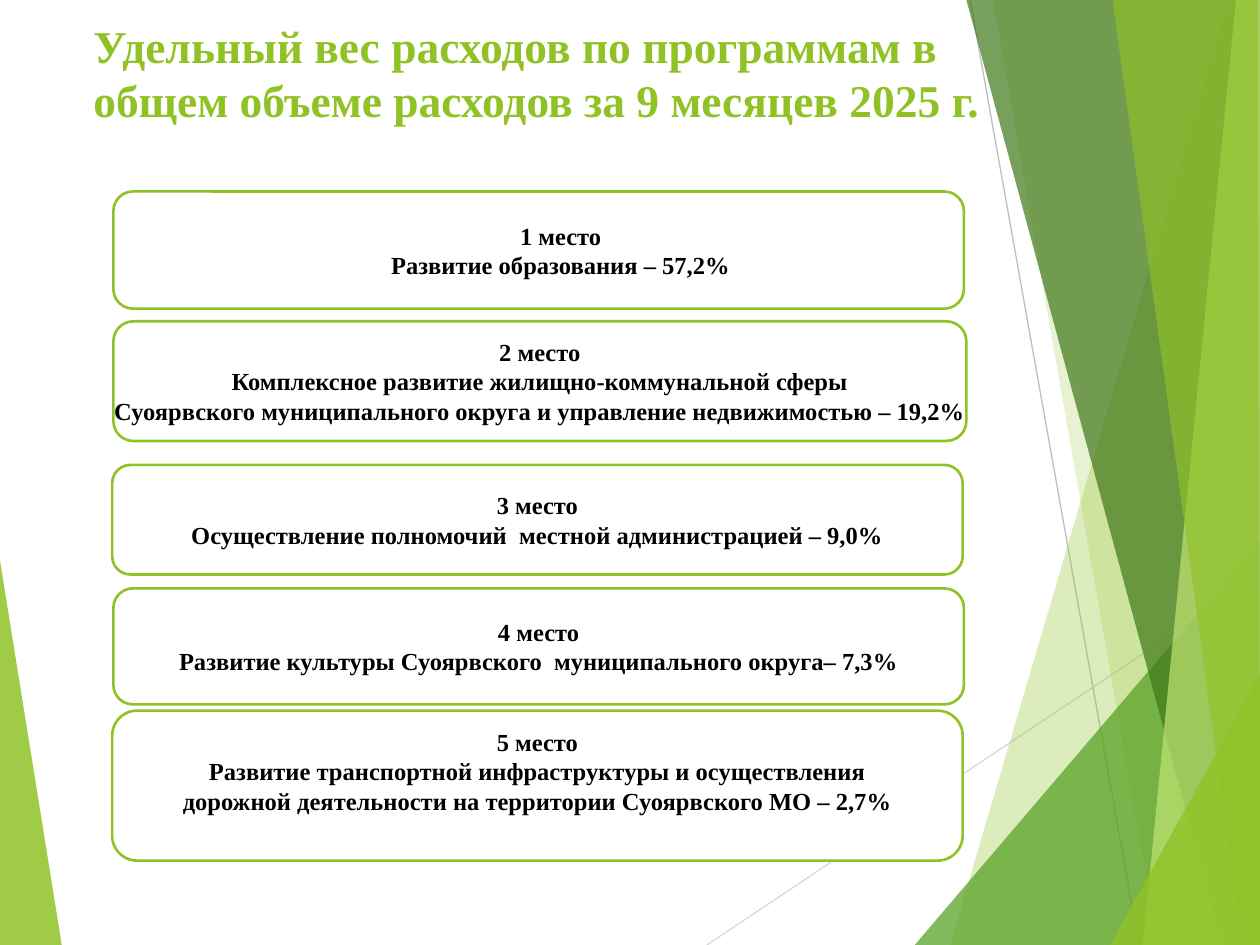
"""Build a slide ranking municipal programmes by their share of spending."""
from lxml.etree import SubElement
from pptx import Presentation
from pptx.dml.color import RGBColor
from pptx.enum.shapes import MSO_CONNECTOR as Connector, MSO_SHAPE as Shape
from pptx.enum.text import MSO_ANCHOR as Anchor, MSO_AUTO_SIZE as AutoSize, PP_ALIGN as Align
from pptx.oxml.ns import qn
from pptx.util import Pt

PX = 9144
WIDTH, HEIGHT = 1000, 750
FONT = "Times New Roman"
LIME = RGBColor(0x90, 0xC2, 0x26)
GREEN = RGBColor(0x54, 0xA0, 0x21)
DARK_GREEN = RGBColor(0x3F, 0x78, 0x19)
PALE_LIME = RGBColor(0xC0, 0xE4, 0x74)
LIGHT_GREY = RGBColor(0xD9, 0xD9, 0xD9)
GREY = RGBColor(0xBF, 0xBF, 0xBF)
WHITE = RGBColor(0xFF, 0xFF, 0xFF)
BLACK = RGBColor(0x00, 0x00, 0x00)


def format_paragraph(paragraph, size, color, alignment):
    paragraph.alignment = alignment
    paragraph.font.name = FONT
    paragraph.font.size = Pt(size)
    paragraph.font.bold = True
    paragraph.font.color.rgb = color


def add_panel(shapes, preset, box, lines):
    panel = shapes.add_shape(preset, *(value * PX for value in box))
    panel.shadow.inherit = False
    panel.fill.solid()
    panel.fill.fore_color.rgb = WHITE
    frame = panel.text_frame
    frame.vertical_anchor = Anchor.MIDDLE
    frame.word_wrap = False
    if lines:
        frame.text = "\n".join(lines)
        for paragraph in frame.paragraphs:
            format_paragraph(paragraph, 14, BLACK, Align.CENTER)
    return panel


presentation = Presentation()
presentation.slide_width = WIDTH * PX
presentation.slide_height = HEIGHT * PX
slide = presentation.slides.add_slide(presentation.slide_layouts[5])
shapes = slide.shapes

rays = [
    (LIME, 85, [(0, 445), (49, 750), (0, 750)]),
    (LIME, 30, [(975, 0), (754, 750), (1000, 750), (1000, 0)]),
    (LIME, 20, [(788, 0), (919, 750), (1000, 750), (1000, 0)]),
    (GREEN, 72, [(726, 750), (1000, 429), (1000, 750)]),
    (DARK_GREEN, 70, [(767, 0), (970, 750), (1000, 750), (1000, 0)]),
    (PALE_LIME, 70, [(981, 0), (907, 750), (1000, 750), (1000, 0)]),
    (LIME, 65, [(883, 0), (986, 750), (1000, 750), (998, 0)]),
    (LIME, 80, [(881, 750), (1000, 535), (1000, 750)]),
]
guides = [
    (LIGHT_GREY, (561, 750, 1000, 457)),
    (GREY, (770, 0, 904, 750)),
]

for color, ends in guides:
    guide = shapes.add_connector(Connector.STRAIGHT, *(value * PX for value in ends))
    guide.line.color.rgb = color
    guide.line.width = Pt(0.75)
    SubElement(guide._element.spPr, qn("a:effectLst"))

for color, opacity, points in rays:
    builder = shapes.build_freeform(*points[0], scale=PX)
    builder.add_line_segments(points[1:], close=True)
    ray = builder.convert_to_shape()
    ray.shadow.inherit = False
    ray.fill.solid()
    ray.fill.fore_color.rgb = color
    ray.line.fill.background()
    color_element = ray._element.spPr.find(qn("a:solidFill"))[0]
    SubElement(color_element, qn("a:alpha"), val=str(opacity * 1000))

title = shapes.title
title.left, title.top, title.width, title.height = (value * PX for value in (64, 9, 728, 111))
title.text_frame.text = "Удельный вес расходов по программам в общем объеме расходов за 9 месяцев 2025 г."
title.text_frame.vertical_anchor = Anchor.TOP
title.text_frame.word_wrap = True
title.text_frame.auto_size = AutoSize.NONE
format_paragraph(title.text_frame.paragraphs[0], 26, LIME, Align.LEFT)

places = [
    ((90, 152, 675, 93), 5, []),
    ((90, 255, 677, 95), 5, [
        "2 место",
        "Комплексное развитие жилищно-коммунальной сферы",
        "Суоярвского муниципального округа и управление недвижимостью – 19,2%",
    ]),
    ((89, 369, 675, 87), 5, [
        "3 место",
        "Осуществление полномочий  местной администрацией – 9,0%",
    ]),
    ((90, 467, 675, 92), 5, [
        "4 место",
        "Развитие культуры Суоярвского  муниципального округа– 7,3%",
    ]),
    ((89, 564, 675, 119), 28, [
        "5 место",
        "Развитие транспортной инфраструктуры и осуществления",
        "дорожной деятельности на территории Суоярвского МО – 2,7%",
    ]),
]
for box, bottom_margin, lines in places:
    place = add_panel(shapes, Shape.ROUNDED_RECTANGLE, box, lines)
    place.line.color.rgb = LIME
    place.line.width = Pt(1.5)
    place.text_frame.margin_bottom = bottom_margin * PX

first_place = add_panel(shapes, Shape.RECTANGLE, (130, 169, 630, 59),
                        ["1 место", "Развитие образования – 57,2%"])
first_place.line.fill.background()
first_place.text_frame.word_wrap = True

presentation.save("out.pptx")
